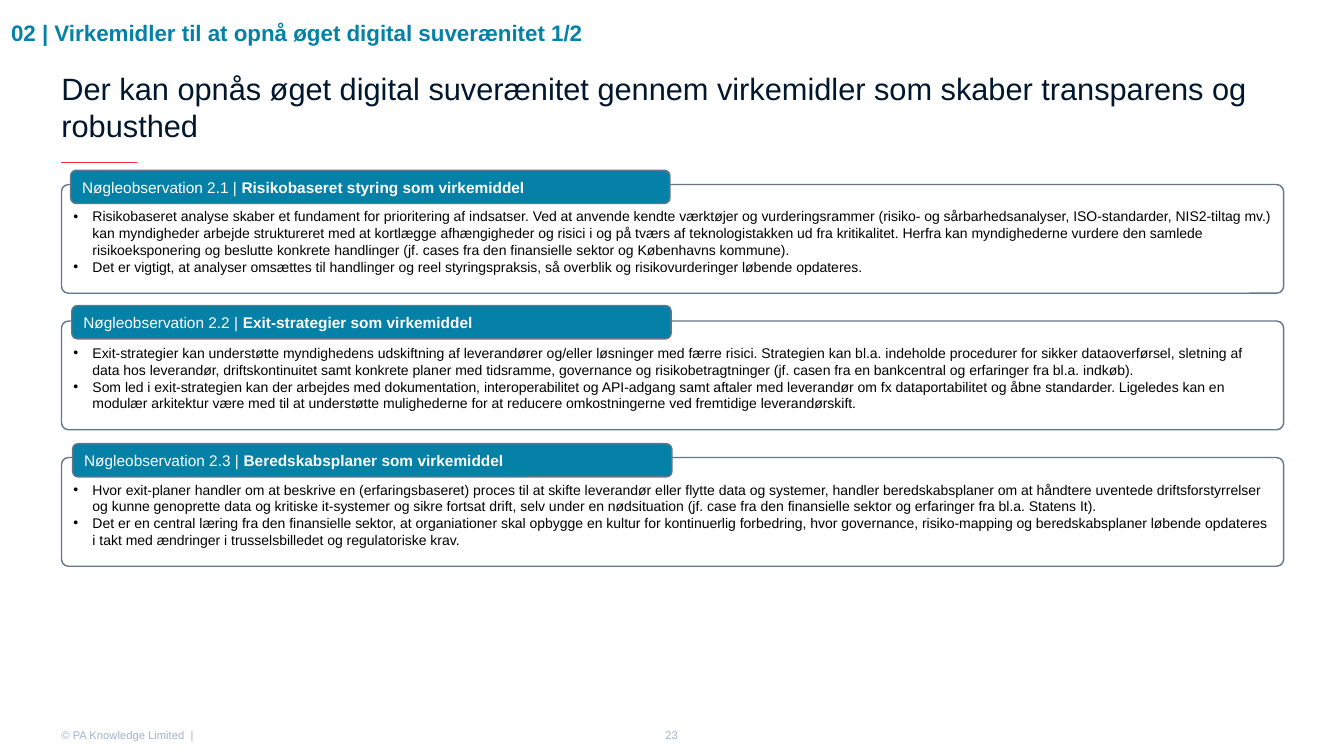
from dataclasses import dataclass

from lxml import etree
from pptx import Presentation
from pptx.dml.color import RGBColor
from pptx.enum.shapes import MSO_CONNECTOR, MSO_SHAPE
from pptx.enum.text import MSO_ANCHOR, PP_ALIGN
from pptx.oxml.ns import qn
from pptx.util import Cm, Pt

ROUND = MSO_SHAPE.ROUNDED_RECTANGLE
STRAIGHT = MSO_CONNECTOR.STRAIGHT
TOP, MIDDLE, BOTTOM = MSO_ANCHOR.TOP, MSO_ANCHOR.MIDDLE, MSO_ANCHOR.BOTTOM
LEFT, CENTER = PP_ALIGN.LEFT, PP_ALIGN.CENTER


@dataclass(frozen=True)
class Theme:
    font: str = "Arial"
    teal: str = "0580A7"
    slate: str = "64778A"
    red: str = "F62B44"
    navy: str = "00172D"
    grey: str = "A2B3C9"
    black: str = "000000"
    white: str = "FFFFFF"
    title: int = 22
    topic: int = 16
    label: int = 11
    body: int = 10
    foot: int = 8


EDGE, WIDTH = 1.55, 30.81
FIRST, STEP, HEIGHT = 4.65, 3.44, 2.74
INSET = (0.25, 0.13, 0.25, 0.13)

# Tab left, tab top, tab name, bullet points
CARDS = [
    (1.78, 4.29, "Risikobaseret styring som virkemiddel", [
        "Risikobaseret analyse skaber et fundament for prioritering af indsatser. Ved at anvende kendte "
        "værktøjer og vurderingsrammer (risiko- og sårbarhedsanalyser, ISO-standarder, NIS2-tiltag mv.) "
        "kan myndigheder arbejde struktureret med at kortlægge afhængigheder og risici i og på tværs af "
        "teknologistakken ud fra kritikalitet. Herfra kan myndighederne vurdere den samlede "
        "risikoeksponering og beslutte konkrete handlinger (jf. cases fra den finansielle sektor og "
        "Københavns kommune).",
        "Det er vigtigt, at analyser omsættes til handlinger og reel styringspraksis, så overblik og "
        "risikovurderinger løbende opdateres.",
    ]),
    (1.81, 7.7, "Exit-strategier som virkemiddel", [
        "Exit-strategier kan understøtte myndighedens udskiftning af leverandører og/eller løsninger med "
        "færre risici. Strategien kan bl.a. indeholde procedurer for sikker dataoverførsel, sletning af "
        "data hos leverandør, driftskontinuitet samt konkrete planer med tidsramme, governance og "
        "risikobetragtninger (jf. casen fra en bankcentral og erfaringer fra bl.a. indkøb).",
        "Som led i exit-strategien kan der arbejdes med dokumentation, interoperabilitet og API-adgang "
        "samt aftaler med leverandør om fx dataportabilitet og åbne standarder. Ligeledes kan en modulær "
        "arkitektur være med til at understøtte mulighederne for at reducere omkostningerne ved "
        "fremtidige leverandørskift.",
    ]),
    (1.83, 11.18, "Beredskabsplaner som virkemiddel", [
        "Hvor exit-planer handler om at beskrive en (erfaringsbaseret) proces til at skifte leverandør "
        "eller flytte data og systemer, handler beredskabsplaner om at håndtere uventede "
        "driftsforstyrrelser og kunne genoprette data og kritiske it-systemer og sikre fortsat drift, "
        "selv under en nødsituation (jf. case fra den finansielle sektor og erfaringer fra bl.a. "
        "Statens It).",
        "Det er en central læring fra den finansielle sektor, at organiationer skal opbygge en kultur "
        "for kontinuerlig forbedring, hvor governance, risiko-mapping og beredskabsplaner løbende "
        "opdateres i takt med ændringer i trusselsbilledet og regulatoriske krav.",
    ]),
]


class Deck:
    def __init__(self, theme):
        self.theme = theme
        self.file = Presentation()
        self.file.slide_width, self.file.slide_height = Cm(33.88), Cm(19.05)
        self.slide = self.file.slides.add_slide(self.file.slide_layouts[6])

    def style(self, para, size, color, bold=None, align=LEFT):
        para.alignment = align
        font = para.font
        font.name, font.size, font.bold = self.theme.font, Pt(size), bold
        font.color.rgb = RGBColor.from_string(color)

    def frame(self, shape, anchor, inset):
        frame = shape.text_frame
        frame.word_wrap, frame.vertical_anchor = True, anchor
        (frame.margin_left, frame.margin_top,
         frame.margin_right, frame.margin_bottom) = map(Cm, inset)
        return frame

    def text(self, box, words, size, color, anchor=MIDDLE, inset=INSET, bold=None, align=LEFT):
        shape = self.slide.shapes.add_textbox(*map(Cm, box))
        para = self.frame(shape, anchor, inset).paragraphs[0]
        para.text = words
        self.style(para, size, color, bold, align)

    def panel(self, box, fill=None, curve=0.167):
        shape = self.slide.shapes.add_shape(ROUND, *map(Cm, box))
        shape.shadow.inherit = False
        shape.adjustments[0] = curve
        if fill:
            shape.fill.solid()
            shape.fill.fore_color.rgb = RGBColor.from_string(fill)
        else:
            shape.fill.background()
        shape.line.color.rgb = RGBColor.from_string(self.theme.slate)
        shape.line.width = Pt(1)
        return shape

    def points(self, box, items):
        """Outlined panel with bullets, leaving room for the tab on its top edge."""
        frame = self.frame(self.panel(box, curve=0.065), TOP, (0.25, 0.54, 0.25, 0.13))
        for i, item in enumerate(items):
            para = frame.add_paragraph() if i else frame.paragraphs[0]
            para.text = item
            props = para._p.get_or_add_pPr()
            props.set("marL", str(Cm(0.48)))
            props.set("indent", str(-Cm(0.48)))
            etree.SubElement(props, qn("a:buFont")).set("typeface", self.theme.font)
            etree.SubElement(props, qn("a:buChar")).set("char", "•")
            self.style(para, self.theme.body, self.theme.black)

    def tab(self, box, lead, name):
        shape = self.panel(box, self.theme.teal)
        para = self.frame(shape, MIDDLE, INSET).paragraphs[0]
        para.add_run().text = lead
        strong = para.add_run()
        strong.text = name
        strong.font.bold = True
        self.style(para, self.theme.label, self.theme.white)

    def rule(self, x, y, length, color):
        line = self.slide.shapes.add_connector(STRAIGHT, Cm(x), Cm(y), Cm(x + length), Cm(y))
        line.line.color.rgb = RGBColor.from_string(color)
        line.line.width = Pt(1)
        etree.SubElement(line._element.spPr, qn("a:effectLst"))


def main():
    theme = Theme()
    deck = Deck(theme)
    deck.text((16.43, 18.21, 1, 0.6), "23", theme.foot, theme.grey,
              inset=(0, 0.13, 0, 0.13), align=CENTER)
    deck.text((EDGE, 18.21, 3.9, 0.6), "© PA Knowledge Limited  |", theme.foot, theme.grey,
              inset=(0, 0.13, 0, 0.13))
    deck.rule(EDGE, 4.1, 1.9, theme.red)
    deck.text((0.03, 0.03, 22.5, 1.58), "02 | Virkemidler til at opnå øget digital suverænitet 1/2",
              theme.topic, theme.teal, bold=True)
    deck.text((EDGE, 1.43, WIDTH, 2.2),
              "Der kan opnås øget digital suverænitet gennem virkemidler som skaber transparens og robusthed",
              theme.title, theme.navy, BOTTOM, (0, 0, 0.28, 0))
    for i, (left, top, name, items) in enumerate(CARDS):
        deck.points((EDGE, FIRST + i * STEP, WIDTH, HEIGHT), items)
        deck.tab((left, top, 15.11, 0.84), f"Nøgleobservation 2.{i + 1} | ", name)
    deck.file.save("out.pptx")


if __name__ == "__main__":
    main()
